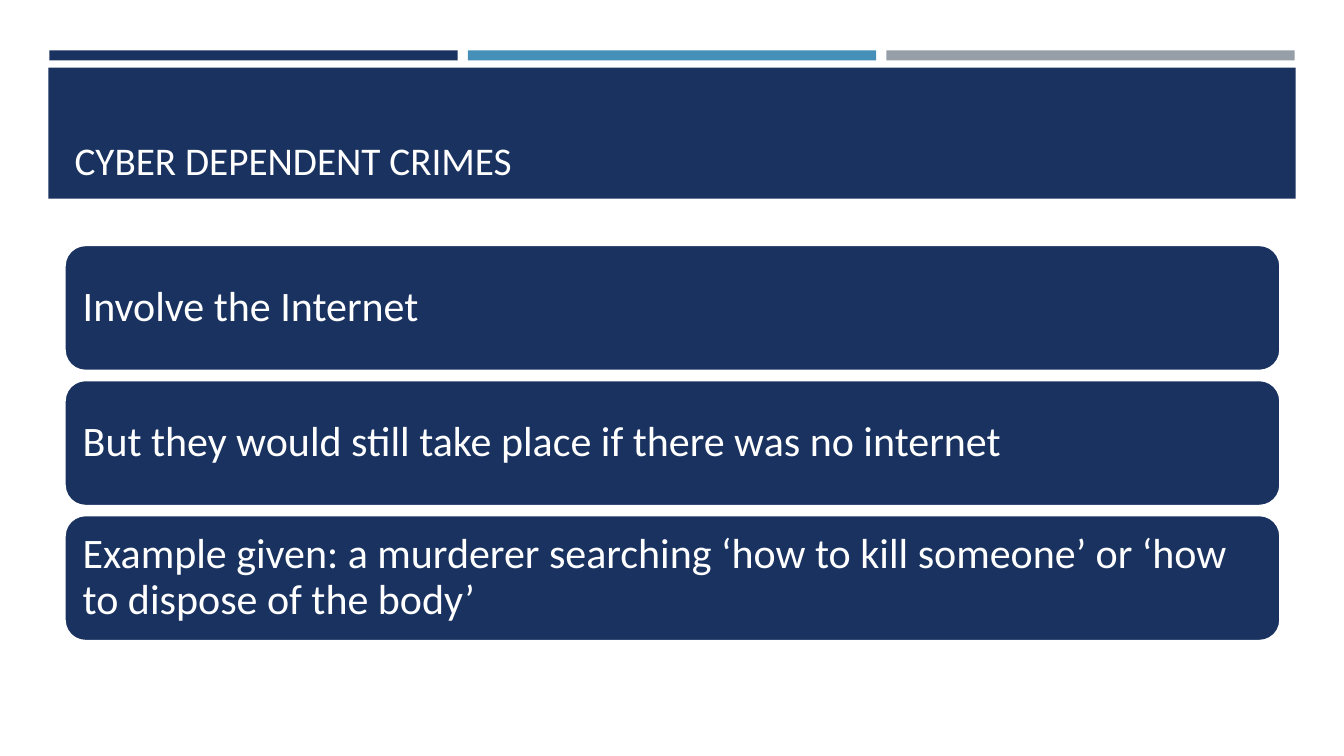
from pptx import Presentation
from pptx.dml.color import RGBColor
from pptx.enum.shapes import MSO_SHAPE as Shape
from pptx.enum.text import MSO_ANCHOR as Anchor, MSO_AUTO_SIZE as AutoSize, PP_ALIGN as Align
from pptx.util import Inches, Pt

NAVY = RGBColor(0x1A, 0x32, 0x60)
BLUE = RGBColor(0x45, 0x90, 0xB8)
GREY = RGBColor(0x96, 0x9F, 0xA7)
WHITE = RGBColor(0xFF, 0xFF, 0xFF)

POINTS = [
    "Involve the Internet",
    "But they would still take place if there was no internet",
    "Example given: a murderer searching ‘how to kill someone’ or ‘how to dispose of the body’",
]


def add_block(page, kind, left, top, width, height, fill, line=None):
    block = page.shapes.add_shape(kind, Inches(left), Inches(top), Inches(width), Inches(height))
    block.shadow.inherit = False
    block.fill.solid()
    block.fill.fore_color.rgb = fill
    if line is None:
        block.line.fill.background()
    else:
        block.line.color.rgb = line
        block.line.width = Pt(1.75)
    return block


def write_text(box, text, size, anchor, side=0.1, edge=0.05, spacing=0.9):
    frame = box.text_frame
    frame.word_wrap = True
    frame.auto_size = AutoSize.NONE
    frame.vertical_anchor = anchor
    frame.margin_left = frame.margin_right = Inches(side)
    frame.margin_top = frame.margin_bottom = Inches(edge)
    para = frame.paragraphs[0]
    para.alignment = Align.LEFT
    para.line_spacing = spacing
    span = para.add_run()
    span.text = text
    span.font.size = Pt(size)
    span.font.name = "Calibri"
    span.font.color.rgb = WHITE


def add_stripes(page, left, top, width, height, gap=0.1):
    colors = [NAVY, BLUE, GREY]
    stripe = (width - gap * (len(colors) - 1)) / len(colors)
    for index, color in enumerate(colors):
        add_block(page, Shape.RECTANGLE, left + index * (stripe + gap), top, stripe, height, color)


def add_title_band(page, left, top, width, height, text):
    add_block(page, Shape.RECTANGLE, left, top, width, height, NAVY)
    title = page.shapes.title
    title.left, title.top = Inches(left + 0.16), Inches(top + 0.1)
    title.width, title.height = Inches(width - 0.31), Inches(height - 0.19)
    write_text(title, text, 28, Anchor.BOTTOM)
    title.element.getparent().append(title.element)


def add_points(page, left, top, width, height, points, gap=0.09):
    card_height = (height - gap * (len(points) - 1)) / len(points)
    for index, point in enumerate(points):
        card_top = top + index * (card_height + gap)
        card = add_block(page, Shape.ROUNDED_RECTANGLE, left, card_top, width, card_height, NAVY, line=WHITE)
        write_text(card, point, 30, Anchor.MIDDLE, side=0.12, edge=0.12)


def main():
    deck = Presentation()
    deck.slide_width, deck.slide_height = Inches(13.33), Inches(7.5)
    page = deck.slides.add_slide(deck.slide_layouts[5])
    add_stripes(page, 0.49, 0.5, 12.35, 0.1)
    add_title_band(page, 0.48, 0.67, 12.37, 1.3, "CYBER DEPENDENT CRIMES")
    add_points(page, 0.64, 2.43, 12.06, 3.93, POINTS)
    deck.save("out.pptx")


if __name__ == "__main__":
    main()
